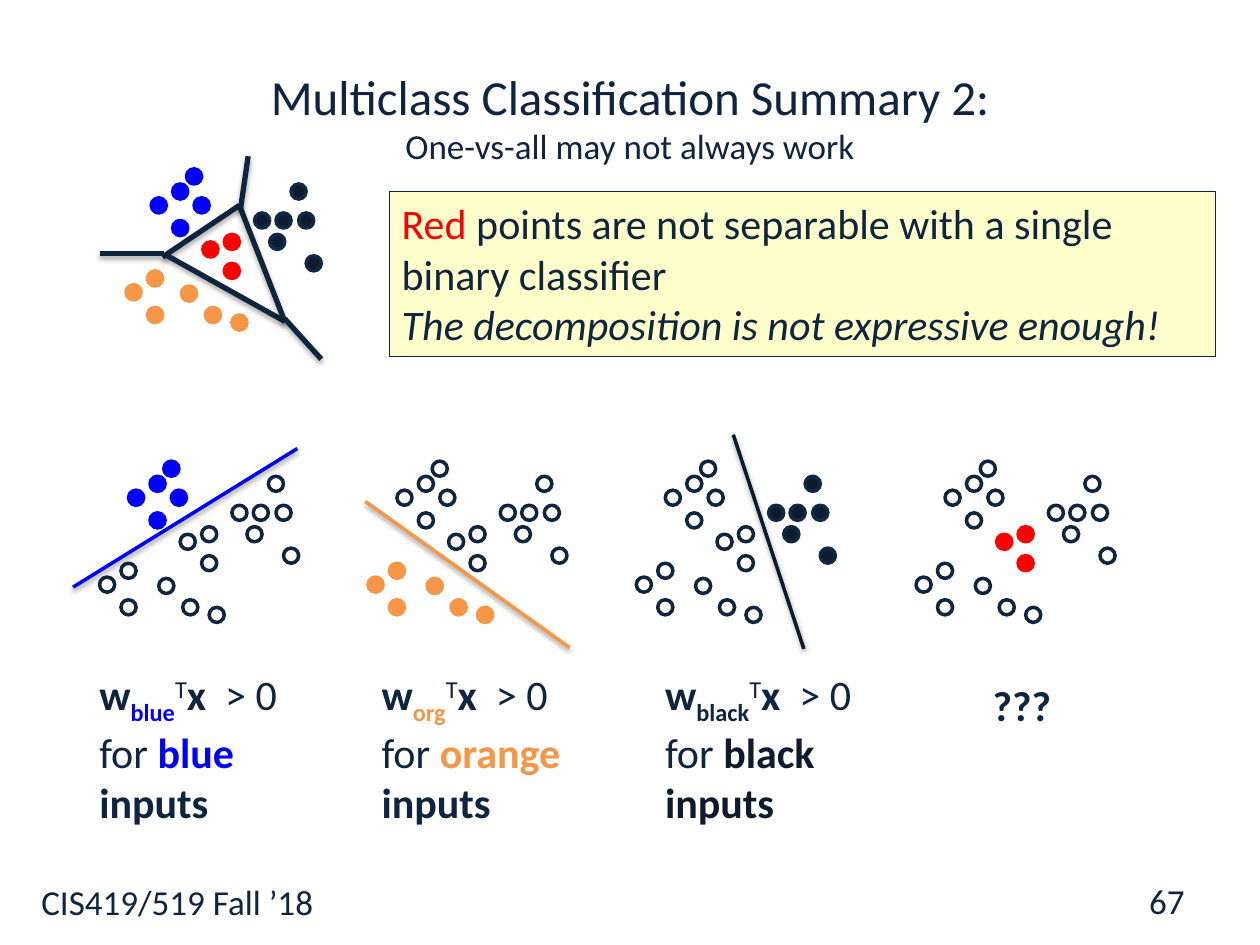
import pptx
import pptx.dml.color
import pptx.enum.shapes
import pptx.enum.text
import pptx.oxml
import pptx.oxml.ns
import pptx.util

PX = 9144  # 100 px to the inch
DOT = 12
COLORS = {
    "ink": "0F243E", "blue": "0000FF", "red": "FF0000", "orange": "F79646",
    "black": "0C1B2E", "black_edge": "112845", "white": "FFFFFF", "note": "FFFFCC",
}
# Dot positions relative to the corner of a scatter
CLUSTERS = {
    "blue": [(40, 12), (51, 0), (23, 23), (57, 23), (40, 41)],
    "red": [(64, 58), (81, 52), (81, 75)],
    "orange": [(87, 116), (47, 93), (66, 110), (17, 81), (0, 92), (17, 110)],
    "black": [(117, 52), (146, 69), (134, 12), (105, 35), (140, 35), (122, 35)],
}


def px(*lengths):
    return [pptx.util.Emu(n * PX) for n in lengths]


def rgb(name):
    return pptx.dml.color.RGBColor.from_string(COLORS[name])


def add_run(p, text, size=24, color="ink", bold=None, italic=None, base=0):
    r = p.add_run()
    r.text = text
    format_run(r, size, color, bold, italic)
    if base:
        r.font._element.set("baseline", str(base * 1000))


def format_run(r, size, color="ink", bold=None, italic=None):
    r.font.name = "Calibri"
    r.font.size = pptx.util.Pt(size)
    r.font.color.rgb = rgb(color)
    r.font.bold = bold
    r.font.italic = italic


def add_text(shapes, box):
    tf = shapes.add_textbox(*px(*box)).text_frame
    tf.word_wrap = True
    return tf


def add_dot(shapes, x, y, fill, edge):
    sp = shapes.add_shape(pptx.enum.shapes.MSO_SHAPE.OVAL, *px(x, y, DOT, DOT))
    sp.shadow.inherit = False
    sp.fill.solid()
    sp.fill.fore_color.rgb = rgb(fill)
    sp.line.color.rgb = rgb(edge)
    sp.line.width = pptx.util.Pt(2)


def add_line(shapes, ends, color, width, alpha, drop):
    line = shapes.add_connector(pptx.enum.shapes.MSO_CONNECTOR.STRAIGHT, *px(*ends))
    line.line.color.rgb = rgb(color)
    line.line.width = pptx.util.Pt(width)
    # Soft shadow straight below the line
    line._element.spPr.append(pptx.oxml.parse_xml(
        f'<a:effectLst {pptx.oxml.ns.nsdecls("a")}>'
        f'<a:outerShdw blurRad="39370" dist="{int(drop * 12700)}" dir="5400000" rotWithShape="0">'
        f'<a:srgbClr val="000000"><a:alpha val="{alpha * 1000}"/></a:srgbClr>'
        '</a:outerShdw></a:effectLst>'))


def add_scatter(shapes, left, top, filled, west_shift=0):
    """Dots of the clusters in filled get their colour, the others stay hollow."""
    for name, dots in CLUSTERS.items():
        fill, edge = (name, name) if name in filled else ("white", "ink")
        if fill == "black":
            edge = "black_edge"
        for x, y in dots:
            shift = west_shift if x < 20 else 0
            add_dot(shapes, left + x + shift, top + y, fill, edge)


def add_title(s, box):
    sp = s.shapes.title
    sp.left, sp.top, sp.width, sp.height = px(*box)
    tf = sp.text_frame
    tf.auto_size = pptx.enum.text.MSO_AUTO_SIZE.NONE
    tf.vertical_anchor = pptx.enum.text.MSO_ANCHOR.MIDDLE
    tf.text = "Multiclass Classification Summary 2:\vOne-vs-all may not always work"
    p = tf.paragraphs[0]
    p.alignment = pptx.enum.text.PP_ALIGN.CENTER
    for r, size in zip(p.runs, (28, 20)):
        format_run(r, size)


def add_note(s, box):
    sp = s.shapes.add_shape(pptx.enum.shapes.MSO_SHAPE.RECTANGLE, *px(*box))
    sp.shadow.inherit = False
    sp.fill.solid()
    sp.fill.fore_color.rgb = rgb("note")
    sp.line.color.rgb = rgb("ink")
    sp.line.width = pptx.util.Pt(0.75)
    tf = sp.text_frame
    tf.word_wrap = True
    tf.vertical_anchor = pptx.enum.text.MSO_ANCHOR.TOP
    p = tf.paragraphs[0]
    add_run(p, "Red", color="red")
    add_run(p, " points are not separable with a single binary classifier")
    add_run(tf.add_paragraph(), "The decomposition is not expressive enough!", italic=True)
    for p in tf.paragraphs:
        p.alignment = pptx.enum.text.PP_ALIGN.LEFT


def add_regions(s, left, top):
    """All four classes with the borders between them."""
    borders = s.shapes.add_group_shape().shapes
    for x1, y1, x2, y2 in [
        (32, 70, 93, 29), (34, 68, 129, 121), (93, 29, 129, 121),  # triangle
        (129, 119, 158, 151), (94, 31, 100, -10), (-18, 67, 33, 67),  # rays
    ]:
        add_line(borders, (left + x1, top + y1, left + x2, top + y2), "ink", 3, 35, 1.8)
    dots = s.shapes.add_group_shape().shapes
    add_scatter(dots, left, top, CLUSTERS, west_shift=3)


def add_classifier(s, left, top, name, divider=None, caption=None):
    """One class against the rest, with its dividing line and rule below."""
    shapes = s.shapes.add_group_shape().shapes
    add_scatter(shapes, left, top, [name])
    if divider:
        x1, y1, x2, y2 = divider
        add_line(shapes, (left + x1, top + y1, left + x2, top + y2), name, 2, 38, 1.6)
    if caption:
        offset, width, short, label, tail = caption
        p = add_text(shapes, (left + offset, top + 160, width, 131)).paragraphs[0]
        add_run(p, "w", bold=True)
        add_run(p, short, color="ink" if name == "black" else name, bold=True, base=-25)
        add_run(p, "T", base=30)
        add_run(p, "x ", bold=True)
        add_run(p, " > 0 for ")
        add_run(p, label, color=name, bold=True)
        add_run(p, tail, color="black" if name == "black" else "ink", bold=True)
    else:
        p = add_text(shapes, (left + 51, top + 168, 101, 50)).paragraphs[0]
        add_run(p, "???", bold=True)


def add_footer(s):
    add_run(add_text(s.shapes, (23, 694, 600, 56)).paragraphs[0], "CIS419/519 Fall ’18", 20)
    tf = add_text(s.shapes, (717, 695, 233, 40))
    tf.vertical_anchor = pptx.enum.text.MSO_ANCHOR.MIDDLE
    p = tf.paragraphs[0]
    p.alignment = pptx.enum.text.PP_ALIGN.RIGHT
    add_run(p, "67", 20)


def main():
    prs = pptx.Presentation()
    prs.slide_width, prs.slide_height = px(1000, 750)
    s = prs.slides.add_slide(prs.slide_layouts[5])
    add_title(s, (50, 30, 900, 125))
    add_note(s, (309, 152, 656, 131))
    add_regions(s, 97, 134)

    # Row of one-vs-all classifiers
    top = 366
    add_classifier(s, 79, top, "blue", (-21, 100, 157, -10),
                   (-10, 186, "blue", "blue ", "inputs"))
    add_classifier(s, 292, top, "orange", (-2, 32, 160, 148),
                   (1, 193, "org", "orange", " inputs"))
    add_classifier(s, 505, top, "black", (77, -21, 133, 149),
                   (13, 209, "black", "black", " inputs"))
    add_classifier(s, 727, top, "red")

    add_footer(s)
    prs.save("out.pptx")


if __name__ == "__main__":
    main()
